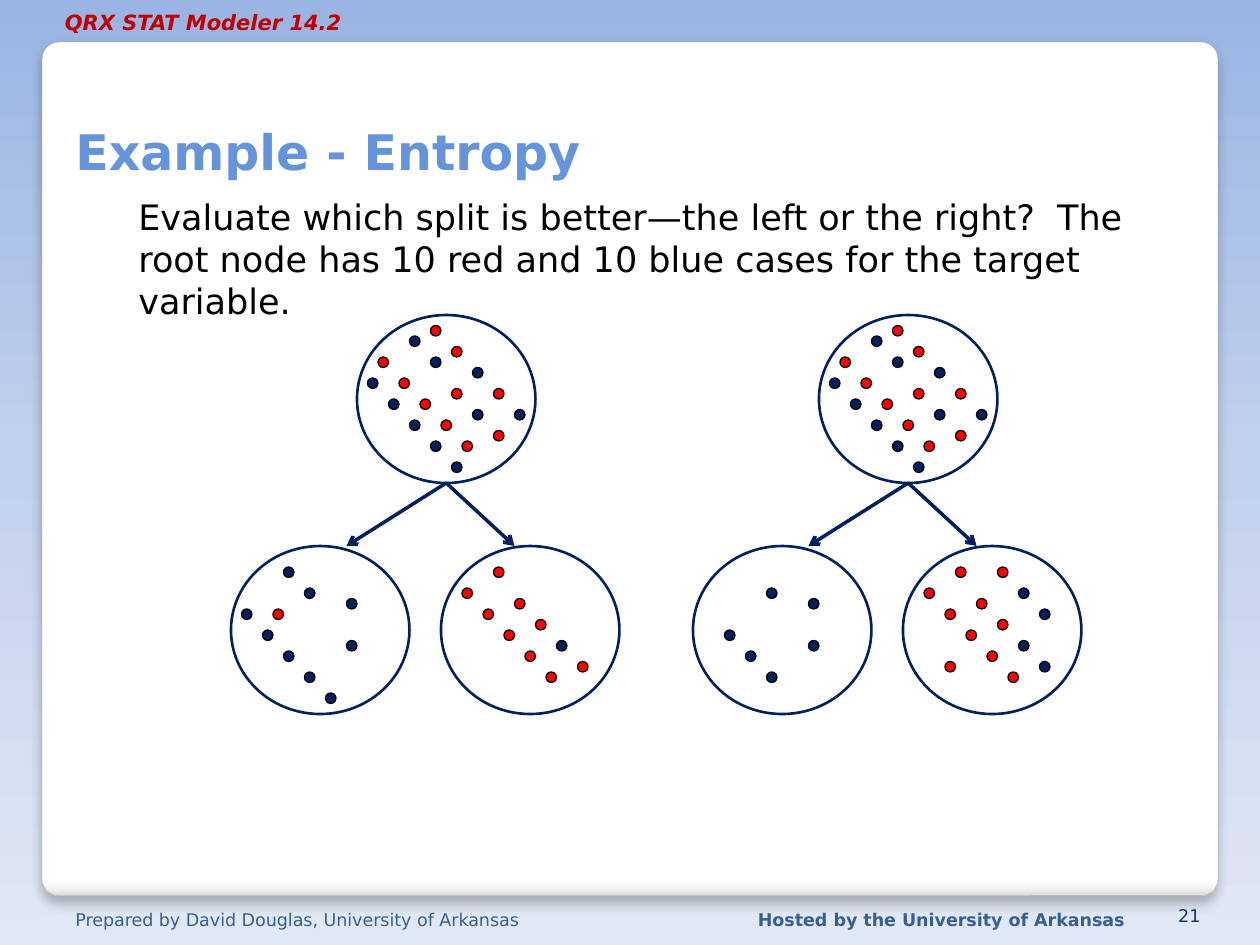
"""Build the entropy example slide on a grid of 120 columns by 90 rows."""
from lxml import etree
from pptx import Presentation
from pptx import util as u
from pptx.dml.color import RGBColor
from pptx.enum import shapes, text
from pptx.oxml import ns

CELL = u.Inches(10) // 120
NAVY = RGBColor(0x00, 0x20, 0x60)
RED = RGBColor(0xFF, 0x00, 0x00)
BLACK = RGBColor(0x00, 0x00, 0x00)
CRIMSON = RGBColor(0xC0, 0x00, 0x00)
SKY = RGBColor(0x65, 0x94, 0xDA)
STEEL = RGBColor(0x37, 0x60, 0x92)
DEEP = RGBColor(0x17, 0x37, 0x5E)
GREY = RGBColor(0xA4, 0xA4, 0xA4)

BACKDROP = [(0, "9AB5E4"), (50, "C2D1ED"), (100, "E1E8F5")]
PANEL = [(0, "FFFFFF"), (98, "FFFFFF"), (99, "F7F7F7"), (100, "DADADA")]

BLUE_CHAIN = [(3, 8), (5, 10), (7, 12)]
RED_CHAIN = [(2, 4), (4, 6), (6, 8), (8, 10), (10, 12)]
BLUE_CORE = BLUE_CHAIN + [(7, 4), (11, 5), (11, 9)]
BLUE_LEFT = BLUE_CORE + [(1, 6), (9, 14), (5, 2)]
RED_CORE = RED_CHAIN + [(9, 7), (13, 11)]
RED_RIGHT = RED_CHAIN + [(9, 7), (5, 2), (7, 5)]

NODES = [
    (34, 30, BLUE_LEFT + [(15, 9)], RED_CORE + [(7, 1), (9, 3), (13, 7)]),
    (22, 52, BLUE_LEFT, [(4, 6)]),
    (42, 52, [(11, 9)], RED_RIGHT + [(13, 11)]),
    (78, 30, BLUE_LEFT + [(15, 9)], RED_CORE + [(7, 1), (9, 3), (13, 7)]),
    (66, 52, BLUE_CORE, []),
    (86, 52, [(11, 9), (13, 11), (13, 6), (11, 4)], RED_RIGHT + [(9, 2), (4, 11)]),
]

TEXTS = [
    ("QRX STAT Modeler 14.2", (5, 0.36, 28.9, 3.6),
     {"word_wrap": False}, {}, {"size": u.Pt(12), "bold": True, "italic": True}, CRIMSON),
    ("Example - Entropy", (6, 4, 107.4, 13.8),
     {"vertical_anchor": text.MSO_ANCHOR.BOTTOM}, {}, {"size": u.Pt(28), "bold": True}, SKY),
    ("Evaluate which split is better—the left or the right?  The root node has "
     "10 red and 10 blue cases for the target variable.", (12, 18, 97, 13.3),
     {}, {}, {"size": u.Pt(20)}, BLACK),
    ("Prepared by David Douglas, University of Arkansas", (6, 86, 53.5, 2.8),
     {}, {}, {"size": u.Pt(10)}, STEEL),
    ("Hosted by the University of Arkansas", (71, 86, 40, 2.8),
     {}, {}, {"size": u.Pt(10), "bold": True}, STEEL),
    ("21", (109.5, 86, 6, 2.8), {"vertical_anchor": text.MSO_ANCHOR.BOTTOM},
     {"alignment": text.PP_ALIGN.RIGHT}, {"size": u.Pt(10)}, DEEP),
]


def add_gradient(fill, owner, stops):
    fill.gradient()
    fill.gradient_angle = 270
    stop_list = next(owner.iter(ns.qn("a:gsLst")))
    stop_list.clear()
    for share, color in stops:
        stop = etree.SubElement(stop_list, ns.qn("a:gs"), pos=str(share * 1000))
        etree.SubElement(stop, ns.qn("a:srgbClr"), val=color)


def add_shape(kind, frame, line_color, line_width, fill_color=None):
    shape = page.shapes.add_shape(kind, *[round(n * CELL) for n in frame])
    shape.shadow.inherit = False
    shape.line.color.rgb = line_color
    shape.line.width = u.Pt(line_width)
    if fill_color is None:
        shape.fill.background()
    else:
        shape.fill.solid()
        shape.fill.fore_color.rgb = fill_color
    return shape


deck = Presentation()
deck.slide_width, deck.slide_height = 120 * CELL, 90 * CELL
page = deck.slides.add_slide(deck.slide_layouts[6])
add_gradient(page.background.fill, page.element, BACKDROP)

panel = add_shape(shapes.MSO_SHAPE.ROUNDED_RECTANGLE, (4, 4, 112, 81.3), GREY, 0.16)
panel.adjustments[0] = 0.02
add_gradient(panel.fill, panel.element, PANEL)
effects = panel.element.spPr.find(ns.qn("a:effectLst"))
shadow = etree.SubElement(effects, ns.qn("a:outerShdw"), blurRad=str(u.Pt(6)),
                          dist=str(u.Pt(4)), dir="5400000", rotWithShape="0")
shade = etree.SubElement(shadow, ns.qn("a:srgbClr"), val="000000")
etree.SubElement(shade, ns.qn("a:alpha"), val="25000")

for left, top, blues, reds in NODES:
    add_shape(shapes.MSO_SHAPE.FLOWCHART_CONNECTOR, (left, top, 17, 16), NAVY, 1.5)
    for color, dots in ((NAVY, blues), (RED, reds)):
        for column, row in dots:
            add_shape(shapes.MSO_SHAPE.FLOWCHART_CONNECTOR,
                      (left + column, top + row, 1, 1), BLACK, 0.75, color)

for root_left in (34, 78):
    for offset in (15, -1):
        ends = (root_left + 8.5, 46, root_left + offset, 52)
        arrow = page.shapes.add_connector(shapes.MSO_CONNECTOR.STRAIGHT,
                                          *[round(n * CELL) for n in ends])
        arrow.line.color.rgb = NAVY
        arrow.line.width = u.Pt(2)
        properties = arrow.element.spPr
        etree.SubElement(properties.find(ns.qn("a:ln")), ns.qn("a:tailEnd"), type="arrow")
        etree.SubElement(properties, ns.qn("a:effectLst"))

for words, frame, box_format, para_format, font_format, color in TEXTS:
    box = page.shapes.add_textbox(*[round(n * CELL) for n in frame])
    para = box.text_frame.paragraphs[0]
    span = para.add_run()
    span.text = words
    span.font.color.rgb = color
    for target, values in (
        (box.text_frame, {"word_wrap": True, **box_format}),
        (para, para_format),
        (span.font, {"name": "DejaVu Sans", **font_format}),
    ):
        for name, value in values.items():
            setattr(target, name, value)

deck.save("out.pptx")
